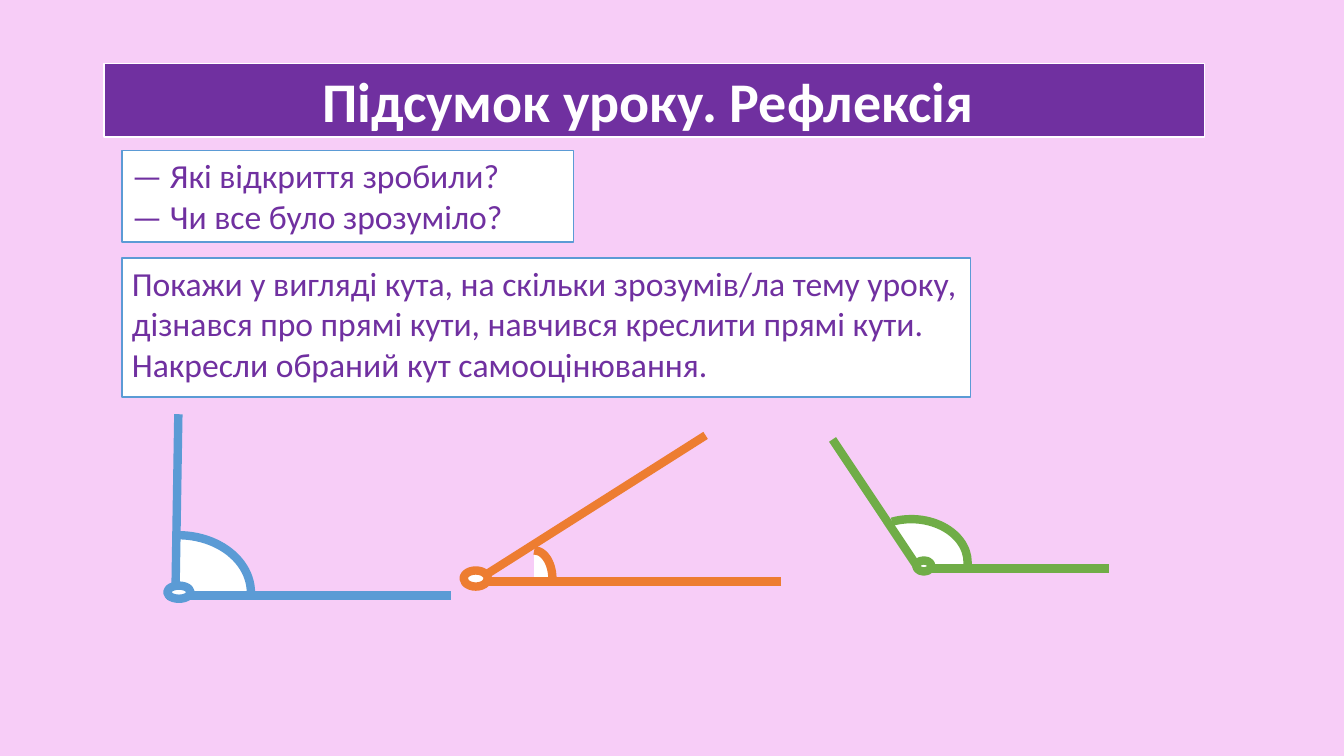
from lxml.etree import SubElement
from pptx import Presentation
from pptx.dml.color import RGBColor
from pptx.enum.shapes import MSO_CONNECTOR as CONNECTOR, MSO_SHAPE as SHAPE
from pptx.enum.text import MSO_ANCHOR as ANCHOR, PP_ALIGN as ALIGN
from pptx.oxml.ns import qn
from pptx.util import Pt

PINK = RGBColor(0xF7, 0xCD, 0xF7)
PURPLE = RGBColor(0x70, 0x30, 0xA0)
WHITE = RGBColor(0xFF, 0xFF, 0xFF)
BLUE = RGBColor(0x5B, 0x9B, 0xD5)
ORANGE = RGBColor(0xED, 0x7D, 0x31)
GREEN = RGBColor(0x70, 0xAD, 0x47)


def paint(shape, fill, line, width):
    shape.fill.solid()
    shape.fill.fore_color.rgb = fill
    shape.line.color.rgb = line
    shape.line.width = Pt(width)


def add_box(bounds, lines, size, fill, line, color):
    box = slide.shapes.add_textbox(*map(Pt, bounds))
    paint(box, fill, line, 1)
    box.text_frame.word_wrap = True
    box.text_frame.text = "\n".join(lines)
    for paragraph in box.text_frame.paragraphs:
        for run in paragraph.runs:
            run.font.name = "Calibri"
            run.font.size = Pt(size)
            run.font.color.rgb = color
    return box


presentation = Presentation()
presentation.slide_width = Pt(960)
presentation.slide_height = Pt(540)
slide = presentation.slides.add_slide(presentation.slide_layouts[6])
slide.background.fill.solid()
slide.background.fill.fore_color.rgb = PINK

questions = ["— Які відкриття зробили?", "— Чи все було зрозуміло?"]
add_box((87.1, 107.3, 322.6, 65.5), questions, 24, WHITE, BLUE, PURPLE)

angles = [
    (BLUE, (75.6, 382.3, 103.7, 82.1), (270, 0),
     [(125.3, 426.2, 127.4, 295.9), (321.8, 425.5, 119.5, 425.5)],
     (119.5, 418.3, 16.6, 9.4)),
    (ORANGE, (368.6, 393.1, 26, 40.4), (270, 0),
     [(558, 415.4, 342.7, 415.4), (337, 416.9, 504, 311)],
     (331.2, 407.5, 17.3, 11.5)),
    (GREEN, (610.6, 370.8, 80.6, 62), (244.6, 4.1),
     [(656.6, 406.8, 594.7, 313.9), (656.6, 406.1, 792, 406.1)],
     (654.5, 400.3, 10.8, 7.9)),
]
for color, arc_bounds, sweep, rays, vertex_bounds in angles:
    group = slide.shapes.add_group_shape()

    arc = group.shapes.add_shape(SHAPE.ARC, *map(Pt, arc_bounds))
    for index, degrees in enumerate(sweep):
        arc.adjustments[index] = degrees * 0.6
    paint(arc, WHITE, color, 6)
    arc.shadow.inherit = False

    for ends in rays:
        ray = group.shapes.add_connector(CONNECTOR.STRAIGHT, *map(Pt, ends))
        ray.line.color.rgb = color
        ray.line.width = Pt(6)
        SubElement(ray._element.spPr, qn("a:effectLst"))

    vertex = group.shapes.add_shape(SHAPE.OVAL, *map(Pt, vertex_bounds))
    paint(vertex, WHITE, color, 6)
    vertex.shadow.inherit = False

task = [
    "Покажи у вигляді кута, на скільки зрозумів/ла тему уроку, "
    "дізнався про прямі кути, навчився креслити прямі кути.",
    "Накресли обраний кут самооцінювання.",
]
add_box((87.1, 184.3, 606.2, 99.4), task, 24, WHITE, BLUE, PURPLE)

title = add_box((74.2, 45.4, 786.2, 52.6), ["Підсумок уроку. Рефлексія "],
                40, PURPLE, WHITE, WHITE)
title.text_frame.vertical_anchor = ANCHOR.MIDDLE
heading = title.text_frame.paragraphs[0]
heading.alignment = ALIGN.CENTER
heading.runs[0].font.bold = True

presentation.save("out.pptx")
